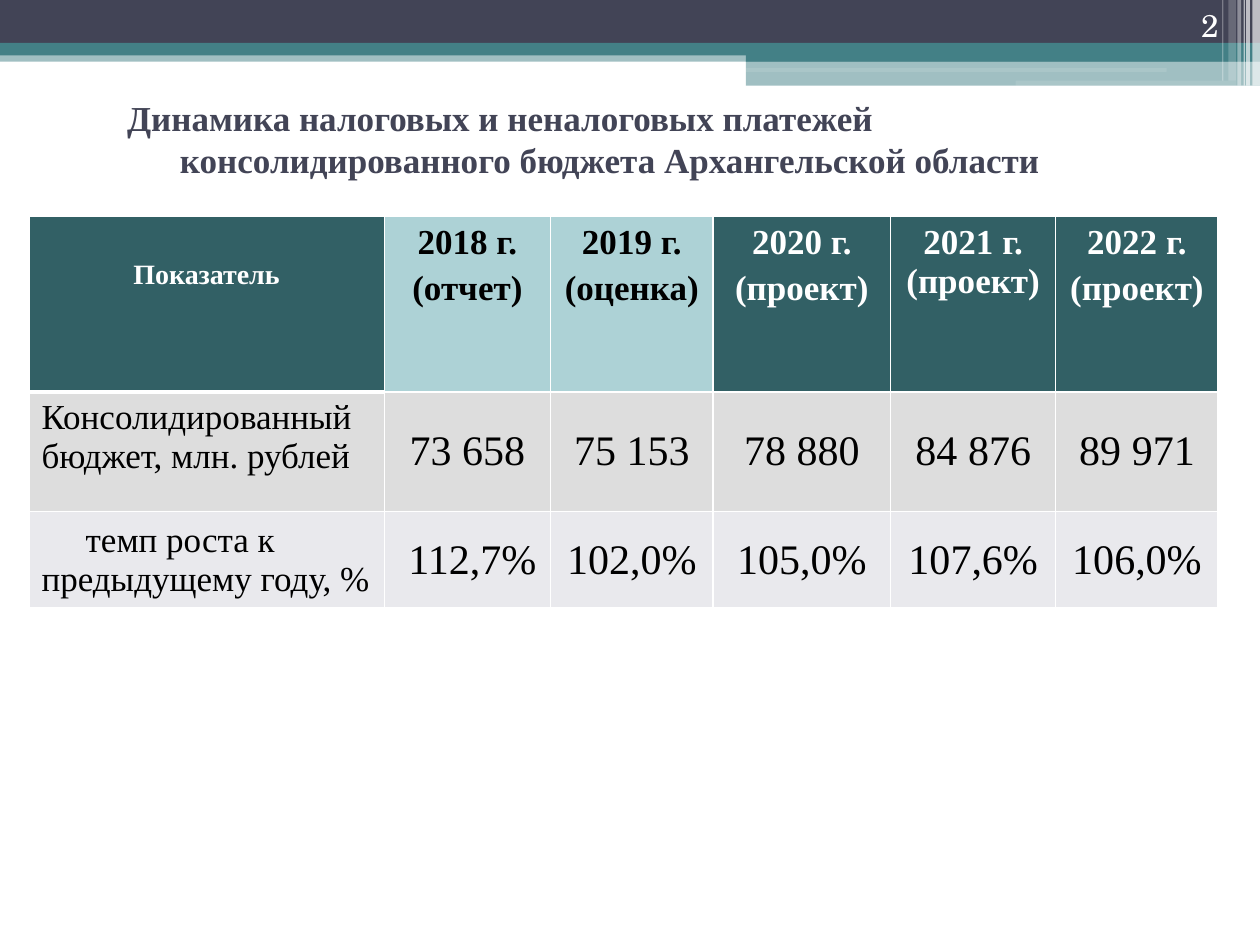
from dataclasses import dataclass

from lxml.etree import SubElement
from pptx import Presentation
from pptx.dml.color import RGBColor
from pptx.enum.shapes import MSO_SHAPE
from pptx.enum.text import MSO_ANCHOR, PP_ALIGN
from pptx.oxml.ns import qn
from pptx.util import Inches, Pt


@dataclass(frozen=True)
class Theme:
    ink: str = "424456"
    teal: str = "438086"
    dark_teal: str = "326065"
    pale_teal: str = "ADD2D6"
    grey: str = "DDDDDD"
    pale_grey: str = "E9E9ED"
    white: str = "FFFFFF"
    black: str = "000000"
    body_font: str = "Times New Roman"
    number_font: str = "TeX Gyre Schola"
    value_size: int = 24
    text_size: int = 20
    page_size: int = 18
    label_size: int = 16


THEME = Theme()
COLUMNS, ROWS = 100, 75
WIDTH, HEIGHT = Inches(10), Inches(7.5)


def across(columns):
    return round(WIDTH * columns / COLUMNS)


def down(rows):
    return round(HEIGHT * rows / ROWS)


def write(frame, text, size=THEME.text_size, color=THEME.black, bold=False,
          font=THEME.body_font, align=PP_ALIGN.CENTER, gap=0, margin=0, indent=0):
    frame.word_wrap = True
    for index, line in enumerate(text.split("\n")):
        paragraph = frame.paragraphs[0] if index == 0 else frame.add_paragraph()
        paragraph.text = line
        paragraph.alignment = align
        paragraph.space_before = Pt(gap if index else 0)
        properties = paragraph._p.get_or_add_pPr()
        properties.set("marL", str(across(margin)))
        properties.set("indent", str(across(indent)))
        for run in paragraph.runs:
            run.font.size = Pt(size)
            run.font.bold = bold
            run.font.name = font
            run.font.color.rgb = RGBColor.from_string(color)


class SlideBuilder:
    def __init__(self, slide, theme):
        self.slide = slide
        self.theme = theme

    def bar(self, left, top, width, height, color, opacity=100,
            kind=MSO_SHAPE.RECTANGLE):
        bar = self.slide.shapes.add_shape(
            kind, across(left), down(top), across(width), down(height))
        bar.shadow.inherit = False
        bar.line.fill.background()
        bar.fill.solid()
        bar.fill.fore_color.rgb = RGBColor.from_string(color)
        if opacity < 100:
            tint = bar.fill._xPr.find(qn("a:solidFill"))[0]
            SubElement(tint, qn("a:alpha"), val=str(opacity * 1000))

    def text(self, left, top, width, height, text, anchor, **style):
        box = self.slide.shapes.add_textbox(
            across(left), down(top), across(width), down(height))
        box.text_frame.vertical_anchor = anchor
        write(box.text_frame, text, **style)

    def table(self, left, top, widths, heights):
        table = self.slide.shapes.add_table(
            len(heights), len(widths), across(left), down(top),
            across(sum(widths)), down(sum(heights))).table
        table.first_row = table.horz_banding = False
        for column, width in zip(table.columns, widths):
            column.width = across(width)
        for row, height in zip(table.rows, heights):
            row.height = down(height)
        return table

    def cell(self, cell, text, fill, anchor=MSO_ANCHOR.MIDDLE,
             top_line=1, bottom_line=1, **style):
        write(cell.text_frame, text, **style)
        cell.vertical_anchor = anchor
        properties = cell._tc.get_or_add_tcPr()
        edges = {"lnL": 1, "lnR": 1, "lnT": top_line, "lnB": bottom_line}
        for edge, points in edges.items():
            line = SubElement(properties, qn(f"a:{edge}"), w=str(Pt(points)))
            solid = SubElement(line, qn("a:solidFill"))
            SubElement(solid, qn("a:srgbClr"), val=self.theme.white)
        cell.fill.solid()
        cell.fill.fore_color.rgb = RGBColor.from_string(fill)


def draw_header(page):
    theme = page.theme
    page.bar(0, 4, 100, 0.9, theme.teal, 50)
    page.bar(0, 0, 100, 3.4, theme.ink)
    page.bar(0, 3.4, 100, 1, theme.teal)
    page.bar(59.2, 3.9, 40.8, 1, theme.teal)
    page.bar(59.2, 4.8, 40.8, 2, theme.teal, 50)
    for left, top, width, height in [(59.1, 5.4, 33.5, 0.3), (80.6, 6.4, 17.5, 0.4)]:
        page.bar(left, top, width, height, theme.white, 11, MSO_SHAPE.ROUNDED_RECTANGLE)
    stripes = [(99.4, 0.6, 6.8, 65), (98.9, 0.3, 6.8, 65), (98.7, 0.1, 6.8, 60),
               (98.2, 0.3, 6.8, 40), (97.5, 0.6, 6.4, 20), (97, 0.1, 6.4, 30)]
    for left, width, height, opacity in stripes:
        page.bar(left, 0, width, height, theme.white, opacity)


def draw_budget(page):
    theme = page.theme
    budget = page.table(2.3, 17.2, [28.2, 13.2, 12.9, 14.1, 13.1, 12.9], [13.9, 9.5, 7.1])
    indicator = budget.cell(0, 0)
    page.cell(indicator, "Показатель", theme.dark_teal, MSO_ANCHOR.TOP,
              bottom_line=3, size=theme.label_size, color=theme.white, bold=True)
    indicator.margin_top = down(3.4)

    years = ["2018 г.\n(отчет)", "2019 г.\n(оценка)", "2020 г.\n(проект)",
             "2021 г. (проект)", "2022 г.\n(проект)"]
    for column, year in enumerate(years, 1):
        planned = "проект" in year
        page.cell(budget.cell(0, column), year,
                  theme.dark_teal if planned else theme.pale_teal, MSO_ANCHOR.TOP,
                  color=theme.white if planned else theme.black, bold=True, gap=4)

    page.cell(budget.cell(1, 0), "Консолидированный бюджет, млн. рублей", theme.grey,
              MSO_ANCHOR.TOP, top_line=3, align=PP_ALIGN.LEFT)
    page.cell(budget.cell(2, 0), "темп роста к предыдущему году, %", theme.pale_grey,
              align=PP_ALIGN.LEFT, indent=3.5)
    revenues = ["73 658", "75 153", "78 880", "84 876", "89 971"]
    growth_rates = ["112,7%", "102,0%", "105,0%", "107,6%", "106,0%"]
    for row, values, fill in [(1, revenues, theme.grey), (2, growth_rates, theme.pale_grey)]:
        for column, value in enumerate(values, 1):
            page.cell(budget.cell(row, column), value, fill, size=theme.value_size)
    budget.cell(2, 1).margin_left = across(1.8)


def main():
    presentation = Presentation()
    presentation.slide_width, presentation.slide_height = WIDTH, HEIGHT
    slide = presentation.slides.add_slide(presentation.slide_layouts[6])
    page = SlideBuilder(slide, THEME)
    draw_header(page)
    page.text(0, 5.5, 96.9, 10.9,
              "Динамика налоговых и неналоговых платежей\v"
              "консолидированного бюджета Архангельской области",
              MSO_ANCHOR.MIDDLE, color=THEME.ink, bold=True,
              align=PP_ALIGN.LEFT, margin=13.3, indent=-4.2)
    draw_budget(page)
    page.text(89.4, 0, 8.3, 4, "2", MSO_ANCHOR.BOTTOM, size=THEME.page_size,
              color=THEME.white, font=THEME.number_font, align=PP_ALIGN.RIGHT)
    presentation.save("out.pptx")


if __name__ == "__main__":
    main()
